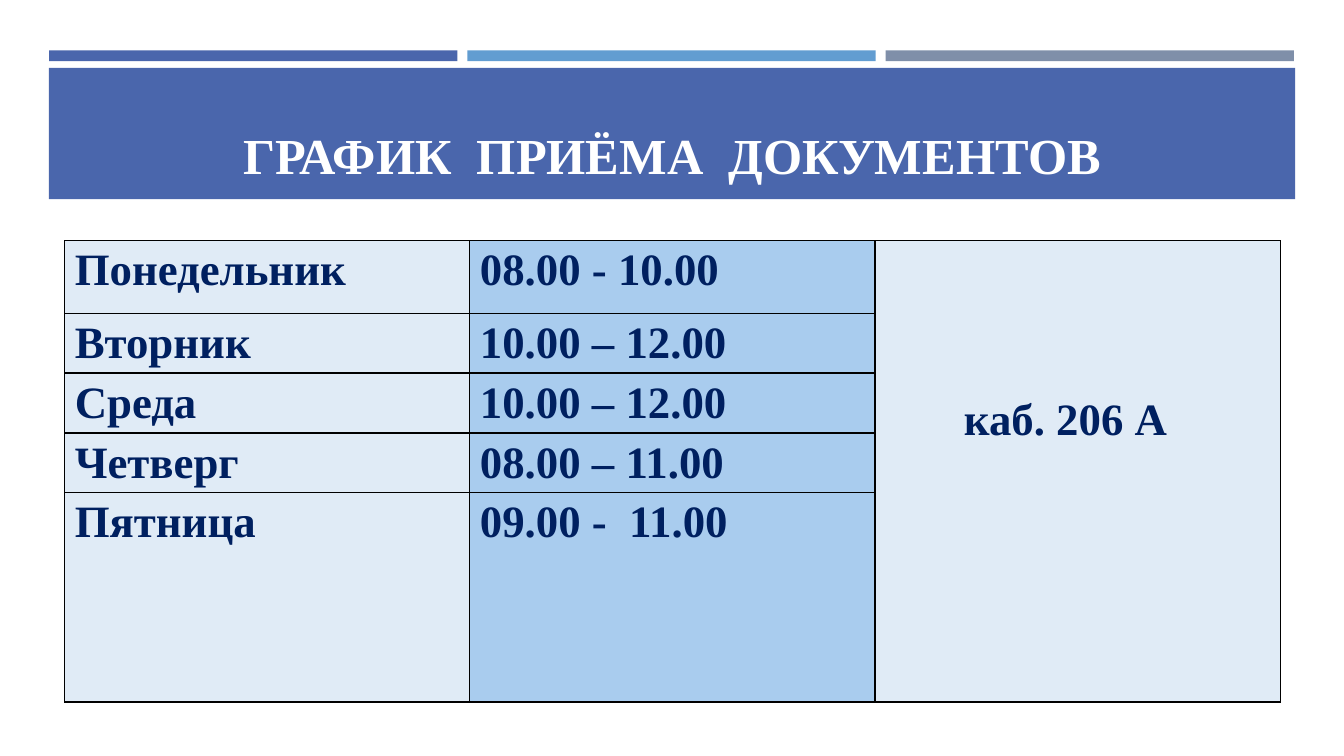
from lxml.etree import SubElement
from pptx import Presentation
from pptx.dml.color import RGBColor
from pptx.enum.shapes import MSO_SHAPE
from pptx.enum.text import MSO_ANCHOR, MSO_AUTO_SIZE, PP_ALIGN
from pptx.oxml.ns import qn
from pptx.util import Cm, Pt

BLUE = RGBColor(0x4A, 0x66, 0xAC)
SKY = RGBColor(0x62, 0x9D, 0xD1)
SLATE = RGBColor(0x7F, 0x8F, 0xA9)
PALE = RGBColor(0xE0, 0xEB, 0xF6)
LIGHT_BLUE = RGBColor(0xA9, 0xCC, 0xEE)
NAVY = RGBColor(0x00, 0x20, 0x60)
WHITE = RGBColor(0xFF, 0xFF, 0xFF)
BLACK = RGBColor(0x00, 0x00, 0x00)

FACE = "Times New Roman"
SCHEDULE = [
    ("Понедельник", "08.00 - 10.00", 1.82),
    ("Вторник", "10.00 – 12.00", 1.51),
    ("Среда", "10.00 – 12.00", 1.51),
    ("Четверг", "08.00 – 11.00", 1.51),
    ("Пятница", "09.00 -  11.00", 5.27),
]


def add_band(slide, left, top, width, height, color):
    band = slide.shapes.add_shape(
        MSO_SHAPE.RECTANGLE, Cm(left), Cm(top), Cm(width), Cm(height))
    band.shadow.inherit = False
    band.fill.solid()
    band.fill.fore_color.rgb = color
    band.line.fill.background()


def style_paragraph(paragraph, size, color, align):
    paragraph.alignment = align
    paragraph.font.name = FACE
    paragraph.font.size = Pt(size)
    paragraph.font.bold = True
    paragraph.font.color.rgb = color


def place_title(slide, text):
    title = slide.shapes.title
    title.left, title.top = Cm(1.63), Cm(1.96)
    title.width, title.height = Cm(30.63), Cm(2.82)
    frame = title.text_frame
    frame.text = text
    frame.word_wrap = True
    frame.auto_size = MSO_AUTO_SIZE.NONE
    frame.vertical_anchor = MSO_ANCHOR.BOTTOM
    style_paragraph(frame.paragraphs[0], 36, WHITE, PP_ALIGN.CENTER)
    slide.shapes._spTree.append(title._element)


def outline_cell(cell):
    properties = cell._tc.get_or_add_tcPr()
    for position, side in enumerate(("a:lnL", "a:lnR", "a:lnT", "a:lnB")):
        border = SubElement(properties, qn(side), w=str(Pt(1)))
        fill = SubElement(border, qn("a:solidFill"))
        SubElement(fill, qn("a:srgbClr"), val=str(BLACK))
        properties.insert(position, border)


def fill_cell(cell, text, color, align=PP_ALIGN.LEFT):
    cell.text = text
    cell.fill.solid()
    cell.fill.fore_color.rgb = color
    style_paragraph(cell.text_frame.paragraphs[0], 32, NAVY, align)


def add_schedule(slide):
    total_height = sum(height for _, _, height in SCHEDULE)
    table = slide.shapes.add_table(
        len(SCHEDULE), 3, Cm(1.63), Cm(6.07), Cm(30.63), Cm(total_height)).table
    table.first_row = False
    table.horz_banding = False
    for column in table.columns:
        column.width = Cm(10.21)
    for index, (day, hours, height) in enumerate(SCHEDULE):
        table.rows[index].height = Cm(height)
        fill_cell(table.cell(index, 0), day, PALE)
        fill_cell(table.cell(index, 1), hours, LIGHT_BLUE)
    room = table.cell(0, 2)
    room.merge(table.cell(len(SCHEDULE) - 1, 2))
    fill_cell(room, "каб. 206 А", PALE, PP_ALIGN.CENTER)
    room.vertical_anchor = MSO_ANCHOR.MIDDLE
    room.margin_bottom = Cm(2.7)
    room.margin_right = Cm(0.86)
    for cell in table.iter_cells():
        outline_cell(cell)


def main():
    presentation = Presentation()
    presentation.slide_width = Cm(33.87)
    presentation.slide_height = Cm(19.05)
    slide = presentation.slides.add_slide(presentation.slide_layouts[5])
    for index, color in enumerate((BLUE, SKY, SLATE)):
        add_band(slide, 1.24 + index * 10.54, 1.27, 10.29, 0.27, color)
    add_band(slide, 1.23, 1.71, 31.41, 3.31, BLUE)
    place_title(slide, "ГРАФИК  ПРИЁМА  ДОКУМЕНТОВ")
    add_schedule(slide)
    presentation.save("out.pptx")


if __name__ == "__main__":
    main()
